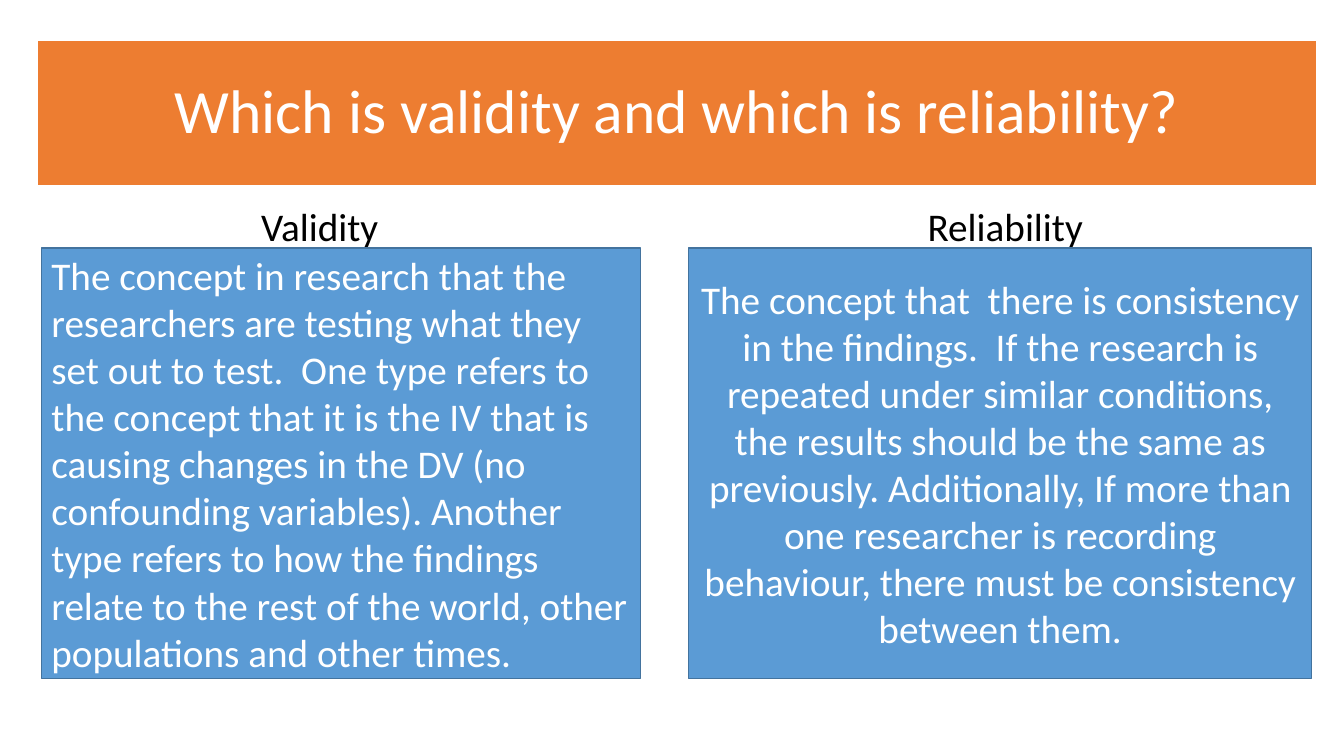
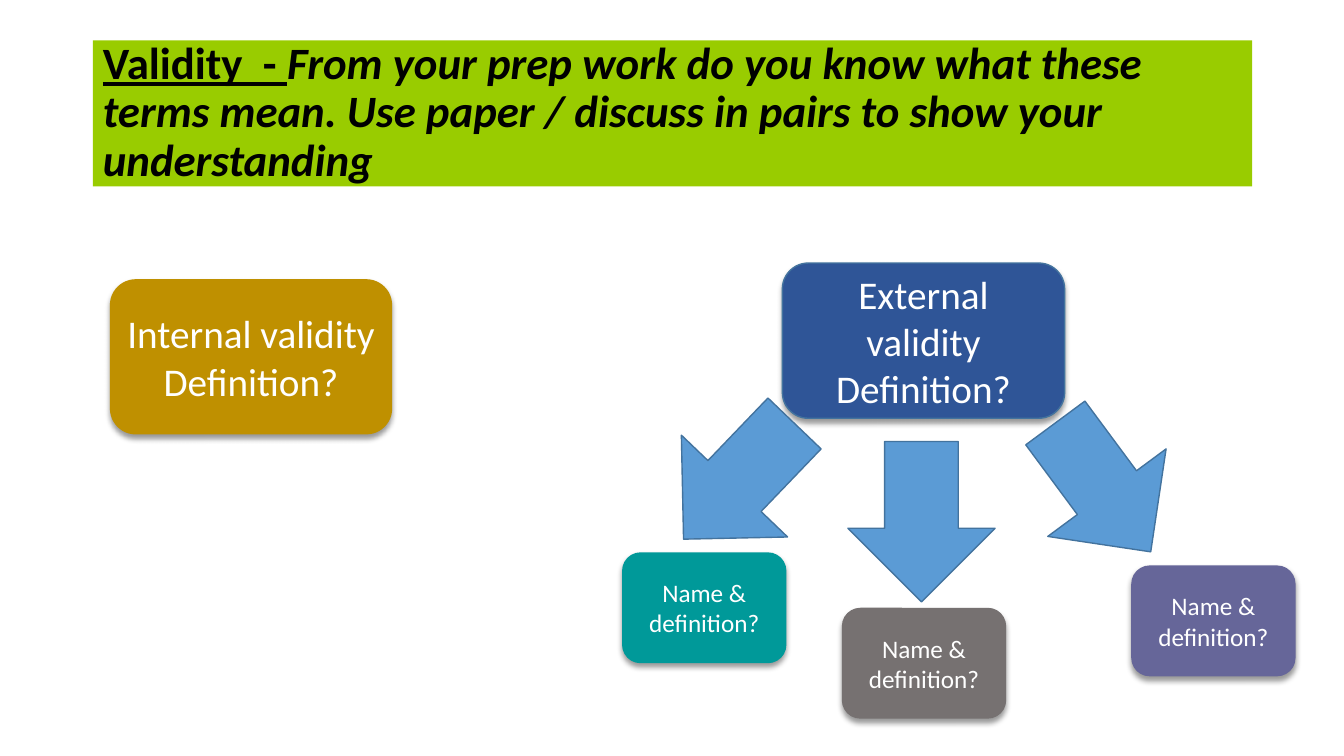
from dataclasses import dataclass

from lxml.etree import SubElement
from pptx import Presentation
from pptx.dml.color import RGBColor
from pptx.enum.shapes import MSO_SHAPE as Geo
from pptx.enum.text import MSO_ANCHOR as Anchor, MSO_AUTO_SIZE as Fit, PP_ALIGN as Align
from pptx.oxml.ns import qn
from pptx.util import Inches, Pt


@dataclass(frozen=True)
class Theme:
    font: str = "Calibri"
    white: str = "FFFFFF"
    black: str = "000000"
    orange: str = "ED7D31"
    lime: str = "99CC00"
    blue: str = "5B9BD5"
    edge: str = "43739E"
    gold: str = "BF9000"
    navy: str = "2F5597"
    teal: str = "009999"
    violet: str = "666699"
    gray: str = "767171"
    head: int = 44
    task: int = 32
    main: int = 28
    small: int = 18


T = Theme()

QUIZ = "Which is validity and which is reliability?"
# term, label centre, box left, box width, alignment, definition
TERMS = [
    ("Validity", 3.17, 0.41, 5.94, Align.LEFT,
     "The concept in research that the researchers are testing what they set out "
     "to test.  One type refers to the concept that it is the IV that is causing "
     "changes in the DV (no confounding variables). Another type refers to how the "
     "findings relate to the rest of the world, other populations and other times."),
    ("Reliability", 9.97, 6.83, 6.18, Align.CENTER,
     "The concept that  there is consistency in the findings.  If the research is "
     "repeated under similar conditions, the results should be the same as "
     "previously. Additionally, If more than one researcher is recording behaviour, "
     "there must be consistency between them."),
]
LABEL_W = 3

TASK = [
    ("Validity  - ", dict(bold=True, underline=True)),
    ("From your prep work do you know what these terms mean. Use paper / discuss "
     "in pairs to show your understanding", dict(bold=True, italic=True)),
]
# left, top, fill, outline, first line
KINDS = [
    (1.09, 2.77, T.gold, None, "Internal validity"),
    (7.76, 2.61, T.navy, T.edge, "External validity"),
]
ASK = "Definition?"
PART = "Name & definition?"
PARTS = [(6.17, 5.48, T.teal), (11.22, 5.61, T.violet), (8.35, 6.03, T.gray)]
ARROWS = [(8.41, 4.38, 0), (10.21, 4.04, 323.5), (6.6, 3.98, 43.8)]  # left, top, turn
KIND_SIZE, PART_SIZE, ARROW_SIZE = (2.8, 1.54), (1.63, 1.1), (1.46, 1.59)


def rgb(code):
    return RGBColor.from_string(code)


def place(shape, left, top, width, height):
    shape.left, shape.top = Inches(left), Inches(top)
    shape.width, shape.height = Inches(width), Inches(height)


def paint(shape, fill, line=None, weight=1):
    shape.fill.solid()
    shape.fill.fore_color.rgb = rgb(fill)
    if line:
        shape.line.color.rgb = rgb(line)
        shape.line.width = Pt(weight)
    else:
        shape.line.fill.background()


def write(shape, *lines, size=T.main, color=T.white, align=Align.CENTER, space=1.0):
    """Each line is a string or a list of (text, font settings) pairs."""
    frame = shape.text_frame
    frame.word_wrap, frame.auto_size = True, Fit.NONE
    frame.vertical_anchor = Anchor.MIDDLE
    for i, line in enumerate(lines):
        para = frame.add_paragraph() if i else frame.paragraphs[0]
        para.alignment, para.line_spacing = align, space
        para.space_before = Pt(0)
        props = para._p.get_or_add_pPr()
        props.set("marL", "0")
        props.set("indent", "0")
        SubElement(props, qn("a:buNone"))
        for text, style in [(line, {})] if isinstance(line, str) else line:
            run = para.add_run()
            run.text = text
            font = run.font
            font.name, font.size, font.color.rgb = T.font, Pt(size), rgb(color)
            font.bold = style.get("bold", False)
            font.italic = style.get("italic", False)
            font.underline = style.get("underline", False)


def band(slide, left, width, text, fill, line=None, **form):
    title = slide.shapes.title
    place(title, left, 0.4, width, 1.45)
    paint(title, fill, line, 1.5)
    write(title, text, space=0.9, **form)


def draw(slide, geo, left, top, extent, fill, line=None):
    shape = slide.shapes.add_shape(geo, 0, 0, 0, 0)
    place(shape, left, top, *extent)
    shape.shadow.inherit = False
    paint(shape, fill, line)
    return shape


def card(slide, left, top, extent, fill, line, *lines, **form):
    """Rounded box with a soft shadow below."""
    shape = draw(slide, Geo.ROUNDED_RECTANGLE, left, top, extent, fill, line)
    effects = shape._element.spPr.find(qn("a:effectLst"))
    shade = SubElement(effects, qn("a:outerShdw"), blurRad=str(int(Pt(4))),
                       dist=str(int(Pt(3))), dir="5400000", rotWithShape="0")
    tone = SubElement(shade, qn("a:srgbClr"), val=T.black)
    SubElement(tone, qn("a:alpha"), val="40000")
    write(shape, *lines, **form)


def compare(deck):
    slide = deck.slides.add_slide(deck.slide_layouts.get_by_name("Comparison"))
    band(slide, 0.37, 12.69, QUIZ, T.orange, T.white, size=T.head)
    holders = list(slide.placeholders)[1:]
    for i, (term, mid, left, width, align, text) in enumerate(TERMS):
        label, box = holders[2 * i:2 * i + 2]
        place(label, mid - LABEL_W / 2, 2, LABEL_W, 0.48)
        write(label, term, color=T.black)
        place(box, left, 2.46, width, 4.27)
        paint(box, T.blue, T.edge)
        write(box, text, align=align)


def explore(deck):
    slide = deck.slides.add_slide(deck.slide_layouts.get_by_name("Title Only"))
    band(slide, 0.92, 11.5, TASK, T.lime, size=T.task, color=T.black, align=Align.LEFT)
    for left, top, fill, line, name in KINDS:
        card(slide, left, top, KIND_SIZE, fill, line, name, ASK)
    for left, top, fill in PARTS:
        card(slide, left, top, PART_SIZE, fill, None, PART, size=T.small)
    for left, top, turn in ARROWS:
        arrow = draw(slide, Geo.DOWN_ARROW, left, top, ARROW_SIZE, T.blue, T.edge)
        arrow.rotation = turn


def main():
    deck = Presentation()
    deck.slide_width, deck.slide_height = Inches(13.33), Inches(7.5)
    compare(deck)
    explore(deck)
    deck.save("out.pptx")


if __name__ == "__main__":
    main()
